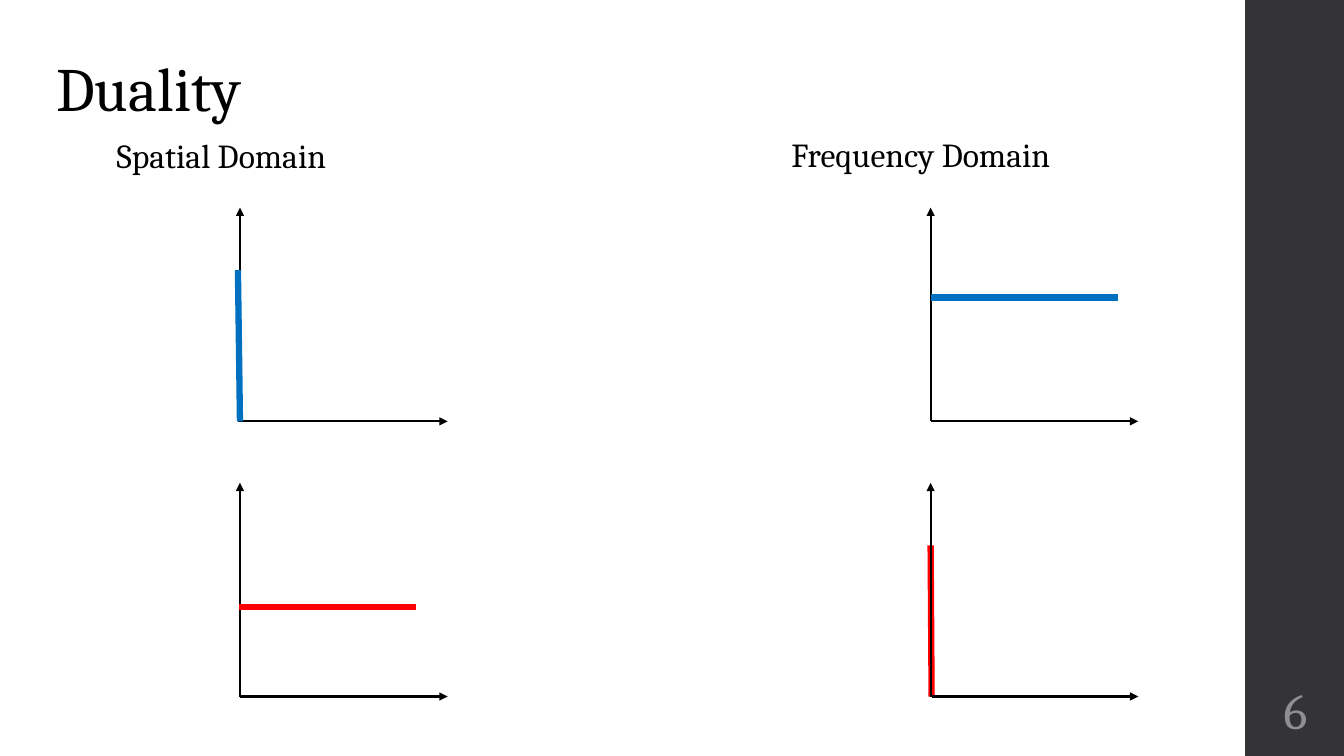
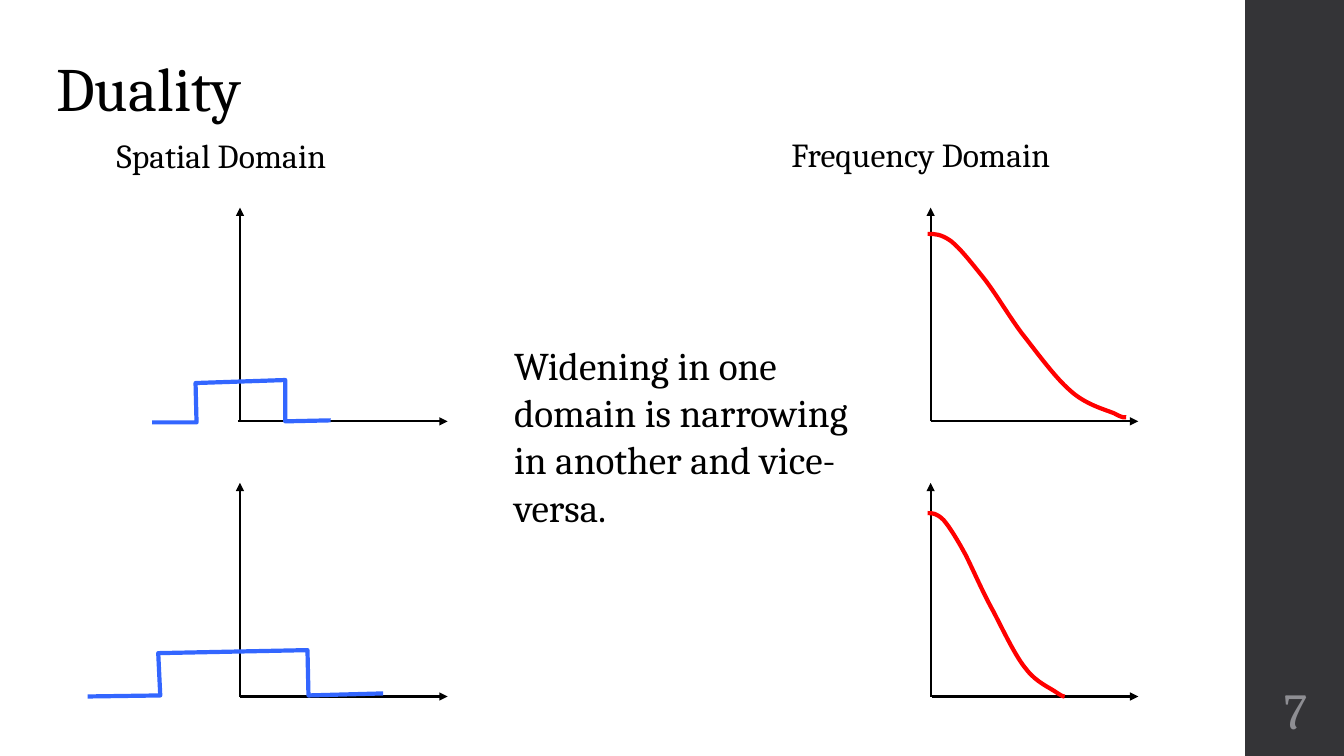
from dataclasses import dataclass

from lxml import etree
from pptx import Presentation
from pptx.dml.color import RGBColor
from pptx.enum.shapes import MSO_CONNECTOR, MSO_SHAPE
from pptx.enum.text import MSO_ANCHOR, MSO_AUTO_SIZE, PP_ALIGN
from pptx.oxml.ns import qn
from pptx.util import Inches, Pt

Point = tuple[float, float]

RECT = MSO_SHAPE.RECTANGLE
STRAIGHT = MSO_CONNECTOR.STRAIGHT
TOP, MIDDLE, BOTTOM = MSO_ANCHOR.TOP, MSO_ANCHOR.MIDDLE, MSO_ANCHOR.BOTTOM
LEFT, CENTER = PP_ALIGN.LEFT, PP_ALIGN.CENTER
NO_AUTOFIT = MSO_AUTO_SIZE.NONE

FONT = "Cambria"
COLORS = {
    "text": "000000",
    "band": "343437",
    "number": "8E8E93",
    "blue": "0070C0",
    "pulse": "3366FF",
    "red": "FF0000",
}
BAND_X = 12.35
SPATIAL_X, FREQ_X = 2.38, 9.23
TOP_Y, BOTTOM_Y = 4.18, 6.91
AXIS_HEIGHT = 2.12


@dataclass(frozen=True)
class Label:
    text: str
    x: float
    y: float
    w: float
    h: float
    size: int
    color: str = "text"
    anchor: MSO_ANCHOR = TOP
    align: PP_ALIGN = LEFT
    spacing: float = 1.0
    margin: float = 0.1


@dataclass(frozen=True)
class Trace:
    points: tuple[Point, ...]
    color: str
    width: float = 3
    curved: bool = False
    behind: bool = False


@dataclass(frozen=True)
class Plot:
    x: float
    y: float
    axis_start: float
    axis_end: float
    trace: Trace


TITLE = Label("Duality", 0.46, 0.4, 11.52, 0.89, 44, anchor=BOTTOM, spacing=0.9)
HEADINGS = (
    Label("Spatial Domain", 1.06, 1.29, 2.64, 0.5, 24),
    Label("Frequency Domain", 7.75, 1.28, 3.16, 0.5, 24),
)
REMARK = Label("Widening in one domain is narrowing in another and vice-versa.",
               5, 3.34, 3.61, 2.46, 28)

IMPULSE_TRACES = (
    Trace(((2.38, 4.18), (2.36, 2.68)), "blue", 4.5),
    Trace(((9.23, 2.95), (11.09, 2.95)), "blue", 4.5),
    Trace(((9.24, 6.91), (9.23, 5.41)), "red", 4.5, behind=True),
    Trace(((2.37, 6.02), (4.13, 6.02)), "red", 4.5),
)
WIDTH_TRACES = (
    Trace(((3.28, 4.17), (2.83, 4.18), (2.83, 3.77), (1.94, 3.8),
           (1.95, 4.19), (1.51, 4.19)), "pulse"),
    Trace(((9.2, 2.32),
           (9.27, 2.32), (9.33, 2.32), (9.43, 2.39),
           (9.52, 2.46), (9.63, 2.6), (9.75, 2.75),
           (9.87, 2.9), (9.99, 3.11), (10.13, 3.3),
           (10.28, 3.49), (10.46, 3.74), (10.61, 3.87),
           (10.76, 4.01), (10.95, 4.06), (11.05, 4.1),
           (11.14, 4.15), (11.15, 4.14), (11.17, 4.14)), "red", curved=True),
    Trace(((9.2, 5.09),
           (9.25, 5.09), (9.29, 5.09), (9.36, 5.16),
           (9.42, 5.23), (9.5, 5.36), (9.58, 5.51),
           (9.66, 5.67), (9.75, 5.88), (9.85, 6.06),
           (9.95, 6.25), (10.07, 6.51), (10.18, 6.64),
           (10.28, 6.77), (10.41, 6.82), (10.48, 6.87),
           (10.54, 6.91), (10.55, 6.91), (10.56, 6.91)), "red", curved=True),
    Trace(((3.8, 6.88), (3.06, 6.9), (3.05, 6.45), (1.57, 6.48),
           (1.59, 6.9), (0.87, 6.91)), "pulse"),
)


def rgb(name: str) -> RGBColor:
    return RGBColor.from_string(COLORS[name])


def write_label(sp, label: Label) -> None:
    sp.left, sp.top = Inches(label.x), Inches(label.y)
    sp.width, sp.height = Inches(label.w), Inches(label.h)
    tf = sp.text_frame
    tf.word_wrap = True
    tf.auto_size = NO_AUTOFIT
    tf.vertical_anchor = label.anchor
    tf.margin_left = tf.margin_right = Inches(label.margin)
    tf.margin_top = tf.margin_bottom = Inches(0.05)
    p = tf.paragraphs[0]
    p.alignment = label.align
    p.line_spacing = label.spacing
    r = p.add_run()
    r.text = label.text
    r.font.name = FONT
    r.font.size = Pt(label.size)
    r.font.color.rgb = rgb(label.color)


def add_label(slide, label: Label) -> None:
    box = slide.shapes.add_textbox(0, 0, Inches(label.w), Inches(label.h))
    write_label(box, label)


def add_line(group, start: Point, end: Point, color: str, width: float,
             arrow: bool = False) -> None:
    line = group.shapes.add_connector(
        STRAIGHT, *(Inches(v) for v in (*start, *end)))
    line.line.color.rgb = rgb(color)
    line.line.width = Pt(width)
    if arrow:
        ln = line.line._get_or_add_ln()
        etree.SubElement(ln, qn("a:tailEnd"), type="triangle")
    etree.SubElement(line._element.spPr, qn("a:effectLst"))


def bend_segments(sp, points: list[Point]) -> None:
    segments = list(sp._element.iter(qn("a:lnTo")))
    for i, segment in enumerate(segments):
        segment.tag = qn("a:cubicBezTo")
        for child in list(segment):
            segment.remove(child)
        for x, y in points[3 * i + 1:3 * i + 4]:
            etree.SubElement(segment, qn("a:pt"),
                             x=str(x - sp.left), y=str(y - sp.top))


def add_trace(group, trace: Trace) -> None:
    if len(trace.points) == 2:
        add_line(group, *trace.points, trace.color, trace.width)
        return
    points = [(Inches(x), Inches(y)) for x, y in trace.points]
    corners = points[::3] if trace.curved else points
    builder = group.shapes.build_freeform(*corners[0])
    builder.add_line_segments(corners[1:], close=False)
    sp = builder.convert_to_shape()
    if trace.curved:
        bend_segments(sp, points)
    sp.shadow.inherit = False
    sp.fill.background()
    sp.line.color.rgb = rgb(trace.color)
    sp.line.width = Pt(trace.width)


def add_plot(slide, plot: Plot) -> None:
    group = slide.shapes.add_group_shape()
    if plot.trace.behind:
        add_trace(group, plot.trace)
    add_line(group, (plot.axis_start, plot.y), (plot.axis_end, plot.y),
             "text", 1.5, arrow=True)
    add_line(group, (plot.x, plot.y), (plot.x, plot.y - AXIS_HEIGHT),
             "text", 1.5, arrow=True)
    if not plot.trace.behind:
        add_trace(group, plot.trace)


def move_band_to_master(prs, slide) -> None:
    band = slide.shapes.add_shape(RECT, Inches(BAND_X), 0, Inches(1), Inches(7.5))
    band.shadow.inherit = False
    band.fill.solid()
    band.fill.fore_color.rgb = rgb("band")
    band.line.fill.background()
    prs.slide_master.shapes._spTree.insert(2, band._element)


def add_duality_slide(prs, number: int, traces: tuple[Trace, ...]):
    slide = prs.slides.add_slide(prs.slide_layouts[5])
    write_label(slide.shapes.title, TITLE)
    add_label(slide, Label(str(number), BAND_X, 6.75, 1, 0.65, 36, "number",
                           MIDDLE, CENTER, 0.9, 0.05))
    for heading in HEADINGS:
        add_label(slide, heading)
    axes = (
        (SPATIAL_X, TOP_Y, 2.36, 4.44),
        (FREQ_X, TOP_Y, FREQ_X, 11.29),
        (FREQ_X, BOTTOM_Y, 9.24, 11.29),
        (SPATIAL_X, BOTTOM_Y, SPATIAL_X, 4.44),
    )
    for axis, trace in zip(axes, traces):
        add_plot(slide, Plot(*axis, trace))
    return slide


def main() -> None:
    prs = Presentation()
    prs.slide_width, prs.slide_height = Inches(13.33), Inches(7.5)
    impulse_slide = add_duality_slide(prs, 6, IMPULSE_TRACES)
    move_band_to_master(prs, impulse_slide)
    width_slide = add_duality_slide(prs, 7, WIDTH_TRACES)
    add_label(width_slide, REMARK)
    prs.save("out.pptx")


if __name__ == "__main__":
    main()
